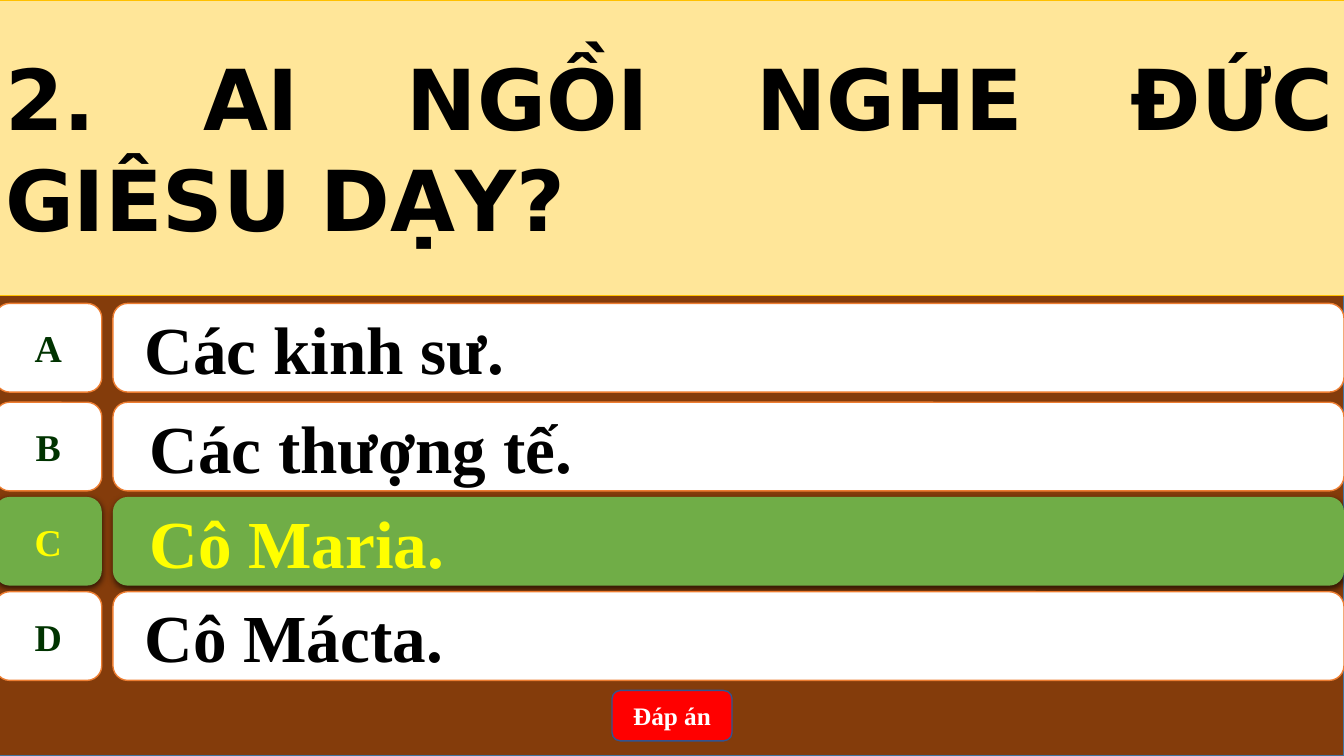
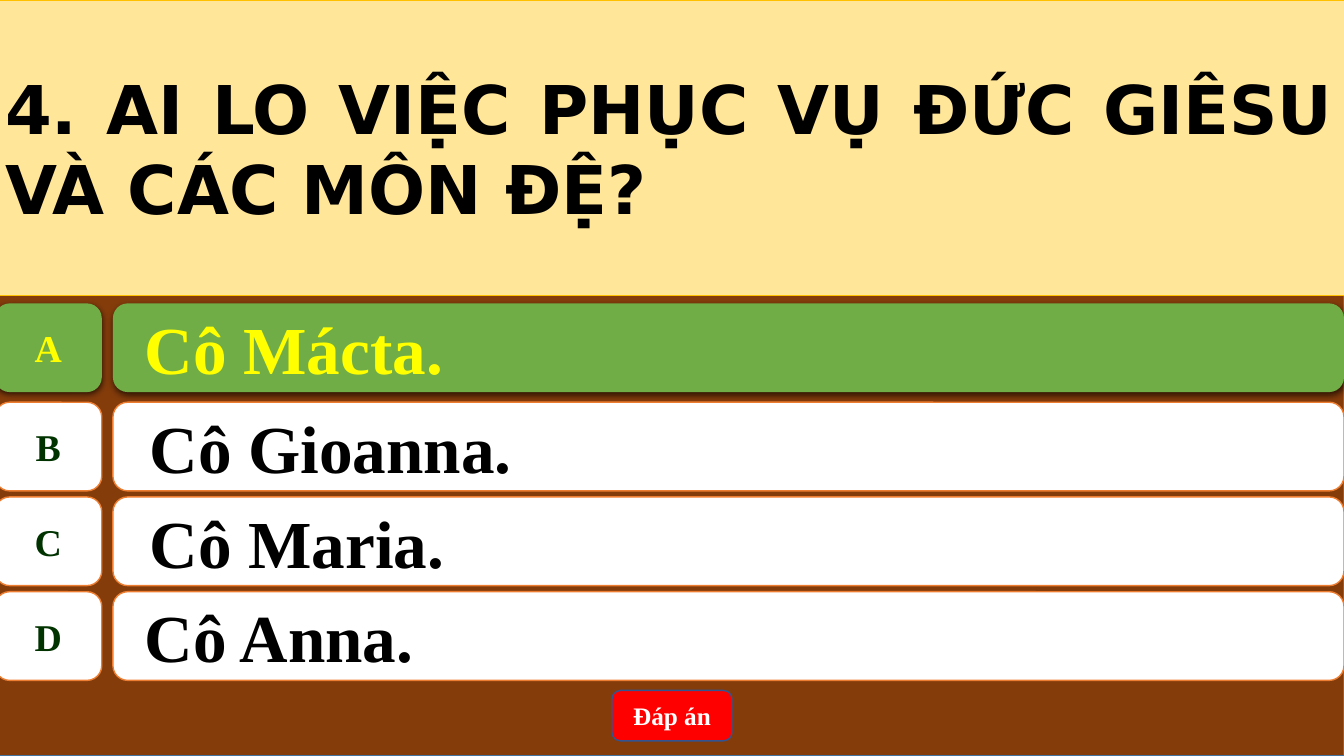
from lxml.etree import SubElement
from pptx import Presentation
from pptx.dml.color import RGBColor as Rgb
from pptx.enum.shapes import MSO_SHAPE as Kind
from pptx.enum.text import MSO_ANCHOR as Anchor, MSO_AUTO_SIZE as Fit, PP_ALIGN as Align
from pptx.oxml.ns import qn
from pptx.util import Inches, Pt

WIDE, HIGH = 13.33, 7.5
COLORS = {
    "brown": "843C0B", "edge": "43739E", "cream": "FFE699", "gold": "FFC000",
    "white": "FFFFFF", "orange": "ED7D31", "green": "70AD47", "yellow": "FFFF00",
    "forest": "003300", "black": "000000", "red": "FF0000", "blue": "325491",
}
SERIF, SANS = "Times New Roman", "DejaVu Sans"
LEFT, BAND = -0.05, 2.93
SPAN = WIDE - LEFT
KEY_WIDE, BAR_LEFT, ROW_HIGH = 1.06, 1.12, 0.88
ROWS = [("A", 3.01, 0.27), ("B", 3.99, 0.32), ("C", 4.93, 0.32), ("D", 5.87, 0.27)]
QUIZ = [
    ("2. AI NGỒI NGHE ĐỨC GIÊSU DẠY?", 60, "C",
     ["Các kinh sư.", "Các thượng tế.", "Cô Maria.", "Cô Mácta."]),
    ("4. AI LO VIỆC PHỤC VỤ ĐỨC GIÊSU VÀ CÁC MÔN ĐỆ?", 48, "A",
     ["Cô Mácta.", "Cô Gioanna.", "Cô Maria.", "Cô Anna."]),
]


def tone(name):
    return Rgb.from_string(COLORS[name])


def paint(shape, fill, line=None, width=1):
    shape.fill.solid()
    shape.fill.fore_color.rgb = tone(fill)
    if line:
        shape.line.color.rgb = tone(line)
        shape.line.width = Pt(width)
    else:
        shape.line.fill.background()


def write(shape, text, size, color="black", font=SERIF, align=Align.CENTER,
          wrap=True, inset=0.1):
    frame = shape.text_frame
    frame.auto_size = Fit.NONE
    frame.word_wrap = wrap
    frame.vertical_anchor = Anchor.MIDDLE
    frame.margin_left = Inches(inset)
    frame.text = text
    para = frame.paragraphs[0]
    para.alignment = align
    para.line_spacing = 1.0
    style = para.runs[0].font
    style.name, style.size, style.bold = font, Pt(size), True
    style.color.rgb = tone(color)


def box(shapes, kind, place, fill, line=None):
    shape = shapes.add_shape(kind, *map(Inches, place))
    shape.shadow.inherit = False
    paint(shape, fill, line)
    return shape


def shade(shape):
    effects = shape.element.spPr.find(qn("a:effectLst"))
    outer = SubElement(effects, qn("a:outerShdw"), blurRad=str(Pt(4.5)),
                       dist=str(Pt(1.5)), dir="5400000", algn="ctr", rotWithShape="0")
    color = SubElement(outer, qn("a:srgbClr"), val=COLORS["black"])
    SubElement(color, qn("a:alpha"), val="63000")


def ask(slide, text, size):
    title = slide.shapes.title
    title.left, title.top, title.width, title.height = map(Inches, (LEFT, 0, SPAN, BAND))
    paint(title, "cream", "gold", 0.5)
    write(title, text, size, font=SANS, align=Align.JUSTIFY)
    back = box(slide.shapes, Kind.RECTANGLE, (LEFT, 0, SPAN, HIGH), "brown", "edge")
    title.element.addprevious(back.element)


def choice(slide, letter, top, inset, text, right):
    shapes = slide.shapes.add_group_shape().shapes
    fill, line = ("green", None) if right else ("white", "orange")
    key = box(shapes, Kind.FLOWCHART_ALTERNATE_PROCESS,
              (LEFT, top, KEY_WIDE, ROW_HIGH), fill, line)
    write(key, letter, 27, "yellow" if right else "forest", wrap=False)
    bar = box(shapes, Kind.ROUNDED_RECTANGLE,
              (BAR_LEFT, top, WIDE - BAR_LEFT, ROW_HIGH), fill, line)
    write(bar, text, 48, "yellow" if right else "black", align=Align.LEFT, inset=inset)
    if right:
        shade(key)
        shade(bar)


def button(slide):
    shape = box(slide.shapes, Kind.ROUNDED_RECTANGLE, (6.07, 6.85, 1.19, 0.5), "red", "blue")
    write(shape, "Đáp án", 18, "white")


def main():
    deck = Presentation()
    deck.slide_width, deck.slide_height = Inches(WIDE), Inches(HIGH)
    for text, size, answer, options in QUIZ:
        slide = deck.slides.add_slide(deck.slide_layouts.get_by_name("Title Only"))
        ask(slide, text, size)
        for (letter, top, inset), option in zip(ROWS, options):
            choice(slide, letter, top, inset, option, letter == answer)
        button(slide)
    deck.save("out.pptx")


if __name__ == "__main__":
    main()
